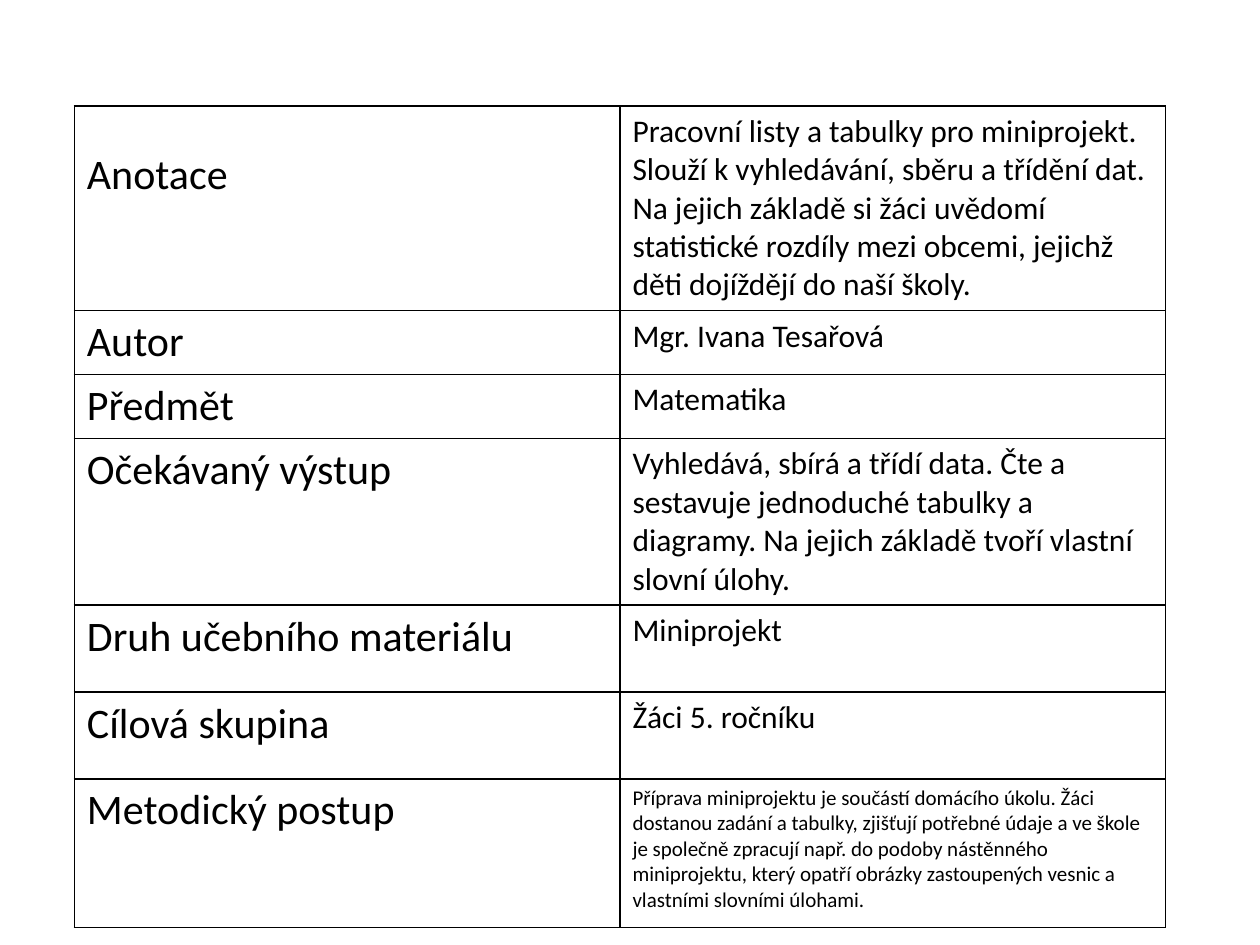
import pptx
import pptx.dml.color
import pptx.oxml
import pptx.oxml.ns
import pptx.util
from pptx.util import Inches

COLORS = {"text": "000000", "border": "000000", "background": "FFFFFF"}
FONT = "Calibri"
LABEL_SIZE = 24
COLUMN_WIDTH = 4.33

# Label, paragraphs of the description, description size, row height
ROWS = [
    ("Anotace",
     ["Pracovní listy a tabulky pro miniprojekt.",
      "Slouží k vyhledávání, sběru a třídění dat.",
      "Na jejich základě si žáci uvědomí statistické rozdíly mezi obcemi, "
      "jejichž děti dojíždějí do naší školy."], 18, 1.57),
    ("Autor", ["Mgr. Ivana Tesařová"], 18, 0.45),
    ("Předmět", ["Matematika"], 18, 0.42),
    ("Očekávaný výstup",
     ["Vyhledává, sbírá a třídí data. Čte a sestavuje jednoduché tabulky a "
      "diagramy. Na jejich základě tvoří vlastní slovní úlohy."], 18, 1.26),
    ("Druh učebního materiálu", ["Miniprojekt"], 18, 0.69),
    ("Cílová skupina", ["Žáci 5. ročníku"], 18, 0.69),
    ("Metodický postup",
     ["Příprava miniprojektu je součástí domácího úkolu. Žáci dostanou zadání "
      "a tabulky, zjišťují potřebné údaje a ve škole je společně zpracují např. "
      "do podoby nástěnného miniprojektu, který opatří obrázky zastoupených "
      "vesnic a vlastními slovními úlohami."], 12, 1.18),
]


def rgb(name):
    return pptx.dml.color.RGBColor.from_string(COLORS[name])


def add_borders(cell):
    """Draw a 1 pt line on all four sides; must precede the cell fill."""
    properties = cell._tc.get_or_add_tcPr()
    for side in ("lnL", "lnR", "lnT", "lnB"):
        properties.append(pptx.oxml.parse_xml(
            f'<a:{side} {pptx.oxml.ns.nsdecls("a")} w="{pptx.util.Pt(1)}">'
            f'<a:solidFill><a:srgbClr val="{COLORS["border"]}"/></a:solidFill>'
            f'</a:{side}>'))


def fill_cell(cell, lines, size):
    add_borders(cell)
    cell.fill.solid()
    cell.fill.fore_color.rgb = rgb("background")
    cell.text = "\n".join(lines)
    for paragraph in cell.text_frame.paragraphs:
        paragraph.font.name = FONT
        paragraph.font.size = pptx.util.Pt(size)
        paragraph.font.color.rgb = rgb("text")


def add_overview_table(slide):
    height = sum(row[-1] for row in ROWS)
    table = slide.shapes.add_table(
        len(ROWS), 2, Inches(0.59), Inches(0.84),
        Inches(2 * COLUMN_WIDTH), Inches(height)).table
    table.first_row = False
    table.horz_banding = False
    for index, (label, lines, size, row_height) in enumerate(ROWS):
        table.rows[index].height = Inches(row_height)
        fill_cell(table.cell(index, 0), [label], LABEL_SIZE)
        fill_cell(table.cell(index, 1), lines, size)
    # The first label sits one line lower than the others
    table.cell(0, 0).margin_top = Inches(0.35)


def main():
    presentation = pptx.Presentation()
    presentation.slide_width = Inches(10)
    presentation.slide_height = Inches(7.5)
    slide = presentation.slides.add_slide(presentation.slide_layouts[6])
    add_overview_table(slide)
    presentation.save("out.pptx")


if __name__ == "__main__":
    main()
